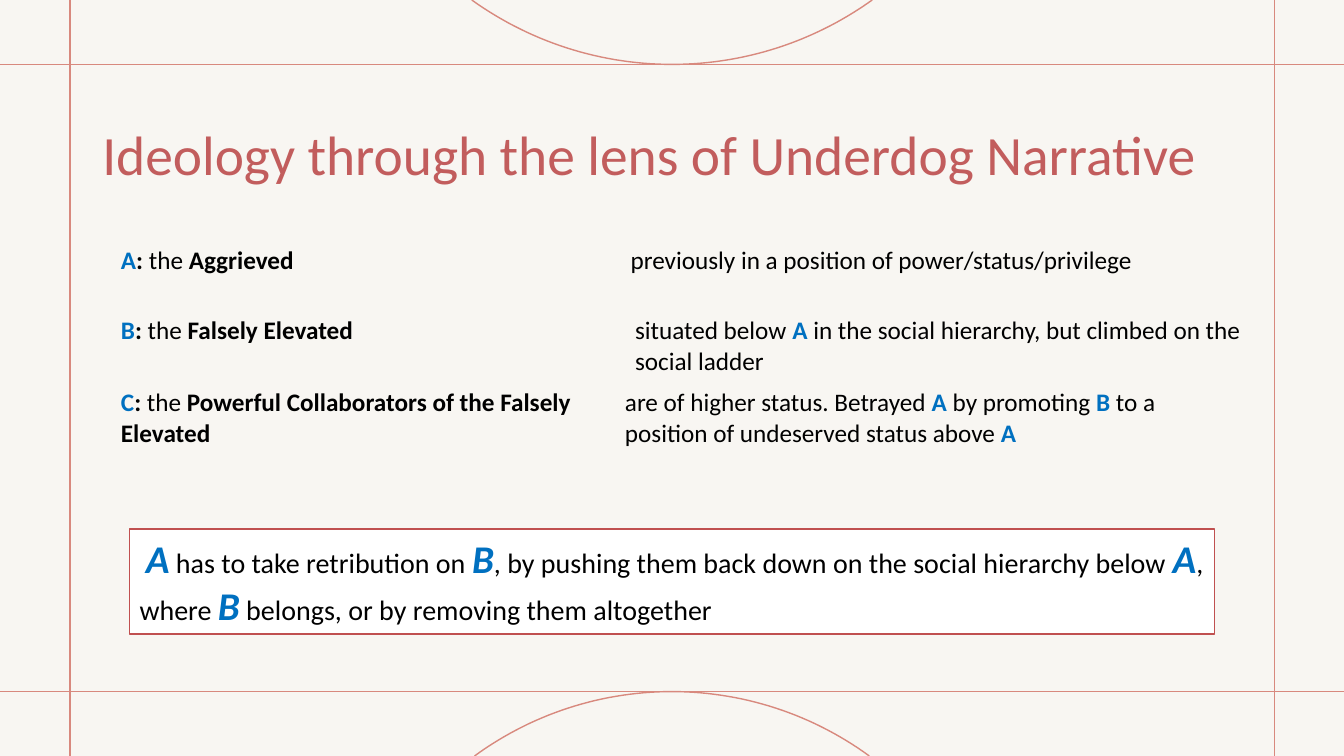
import math

from pptx import Presentation
from pptx.dml.color import RGBColor
from pptx.enum.shapes import MSO_CONNECTOR, MSO_SHAPE
from pptx.enum.text import MSO_ANCHOR, PP_ALIGN
from pptx.oxml.ns import qn
from pptx.util import Pt
from lxml import etree

STRAIGHT = MSO_CONNECTOR.STRAIGHT
RECT = MSO_SHAPE.RECTANGLE
MIDDLE = MSO_ANCHOR.MIDDLE
LEFT = PP_ALIGN.LEFT

FONT = "Calibri"
NO_TABLE_STYLE = "{2D5ABB26-0587-4C30-8999-92F81FD0307C}"
COLORS = {
    "paper": "F8F6F2",
    "rule": "D8897E",
    "title": "C25D5D",
    "letter": "0070C0",
    "text": "000000",
    "box": "FFFFFF",
    "box_line": "C05050",
}
W, H = 960, 540

# Each run is (text, style); styles: letter, bold, plain
ROLES = [
    ([("A", "letter"), (": ", "bold"), ("the ", "plain"), ("Aggrieved", "bold")],
     [(" previously in a position of power/status/privilege", "plain")]),
    ([("B", "letter"), (":", "bold"), (" the ", "plain"), ("Falsely Elevated", "bold")],
     [("situated below ", "plain"), ("A", "letter"),
      (" in the social hierarchy, but climbed on the social ladder", "plain")]),
    ([("C", "letter"), (": ", "bold"), ("the", "plain"),
      (" Powerful Collaborators of the Falsely Elevated", "bold")],
     [("are of higher status. Betrayed ", "plain"), ("A", "letter"),
      (" by promoting ", "plain"), ("B ", "letter"),
      ("to a position of undeserved status above ", "plain"), ("A", "letter")]),
]
CONCLUSION = [
    (" ", "plain"), ("A", "letter"), (" has to take retribution on ", "plain"),
    ("B", "letter"),
    (", by pushing them back down on the social hierarchy below ", "plain"),
    ("A", "letter"), (", where ", "plain"), ("B", "letter"),
    (" belongs, or by removing them altogether", "plain"),
]


def rgb(name):
    return RGBColor.from_string(COLORS[name])


def write_runs(p, runs, size, letter_size=None):
    """Fill a paragraph; letter_size makes the letters larger and italic."""
    p.font.name = FONT
    p.font.size = Pt(size)
    p.alignment = LEFT
    for text, style in runs:
        r = p.add_run()
        r.text = text
        r.font.bold = style != "plain"
        r.font.color.rgb = rgb("letter" if style == "letter" else "text")
        if style == "letter" and letter_size:
            r.font.size = Pt(letter_size)
            r.font.italic = True


def add_rule(slide, x1, y1, x2, y2):
    line = slide.shapes.add_connector(STRAIGHT, Pt(x1), Pt(y1), Pt(x2), Pt(y2))
    line.line.color.rgb = rgb("rule")
    line.line.width = Pt(1)
    etree.SubElement(line._element.spPr, qn("a:effectLst"))


def add_arc(slide, center_x, edge_y, tip_y, half_width):
    """Circular arc that starts and ends on edge_y and touches tip_y."""
    depth = abs(tip_y - edge_y)
    radius = (half_width ** 2 + depth ** 2) / (2 * depth)
    sweep = math.asin(half_width / radius)
    side = 1 if tip_y > edge_y else -1
    steps = 60
    points = []
    for i in range(steps + 1):
        angle = sweep * (2 * i / steps - 1)
        points.append((Pt(center_x + radius * math.sin(angle)),
                       Pt(tip_y - side * radius * (1 - math.cos(angle)))))
    builder = slide.shapes.build_freeform(*points[0])
    builder.add_line_segments(points[1:], close=False)
    sp = builder.convert_to_shape()
    sp.shadow.inherit = False
    sp.fill.background()
    sp.line.color.rgb = rgb("rule")
    sp.line.width = Pt(1)


def add_frame(slide, left, top, right, bottom):
    for y in (top, bottom):
        add_rule(slide, 0, y, W, y)
    for x in (left, right):
        add_rule(slide, x, 0, x, H)
    add_arc(slide, W / 2, 0, top, 143)
    add_arc(slide, W / 2, H, bottom, 141)


def add_title(slide, x, y, w, h):
    tf = slide.shapes.add_textbox(Pt(x), Pt(y), Pt(w), Pt(h)).text_frame
    tf.word_wrap = True
    tf.vertical_anchor = MIDDLE
    p = tf.paragraphs[0]
    p.text = "Ideology through the lens of Underdog Narrative"
    p.font.name = FONT
    p.font.size = Pt(39.6)
    p.font.color.rgb = rgb("title")


def add_roles_table(slide, x, y, w, name_width, row_heights):
    frame = slide.shapes.add_table(len(ROLES), 2, Pt(x), Pt(y), Pt(w),
                                   Pt(sum(row_heights)))
    table = frame.table
    table.first_row = False
    table.horz_banding = False
    table._tbl.tblPr.find(qn("a:tableStyleId")).text = NO_TABLE_STYLE
    table.columns[0].width = Pt(name_width)
    table.columns[1].width = Pt(w - name_width)
    for i, (height, role) in enumerate(zip(row_heights, ROLES)):
        table.rows[i].height = Pt(height)
        for j, runs in enumerate(role):
            cell = table.cell(i, j)
            cell.fill.background()
            write_runs(cell.text_frame.paragraphs[0], runs, 18)
    elevated = table.cell(1, 1)
    elevated.margin_left = Pt(14.4)


def add_conclusion(slide, x, y, w, h):
    sp = slide.shapes.add_shape(RECT, Pt(x), Pt(y), Pt(w), Pt(h))
    sp.shadow.inherit = False
    sp.fill.solid()
    sp.fill.fore_color.rgb = rgb("box")
    sp.line.color.rgb = rgb("box_line")
    sp.line.width = Pt(1)
    tf = sp.text_frame
    tf.word_wrap = True
    tf.vertical_anchor = MIDDLE
    write_runs(tf.paragraphs[0], CONCLUSION, 20, letter_size=28)


def main():
    prs = Presentation()
    prs.slide_width, prs.slide_height = Pt(W), Pt(H)
    slide = prs.slides.add_slide(prs.slide_layouts[6])
    fill = slide.background.fill
    fill.solid()
    fill.fore_color.rgb = rgb("paper")
    add_frame(slide, 50, 46, 910.5, 494)
    add_title(slide, 66, 57.5, 828, 104.5)
    add_roles_table(slide, 79.2, 172, 814.5, 360, (50, 51.2, 71.6))
    add_conclusion(slide, 92.6, 378, 775, 75)
    prs.save("out.pptx")


if __name__ == "__main__":
    main()
